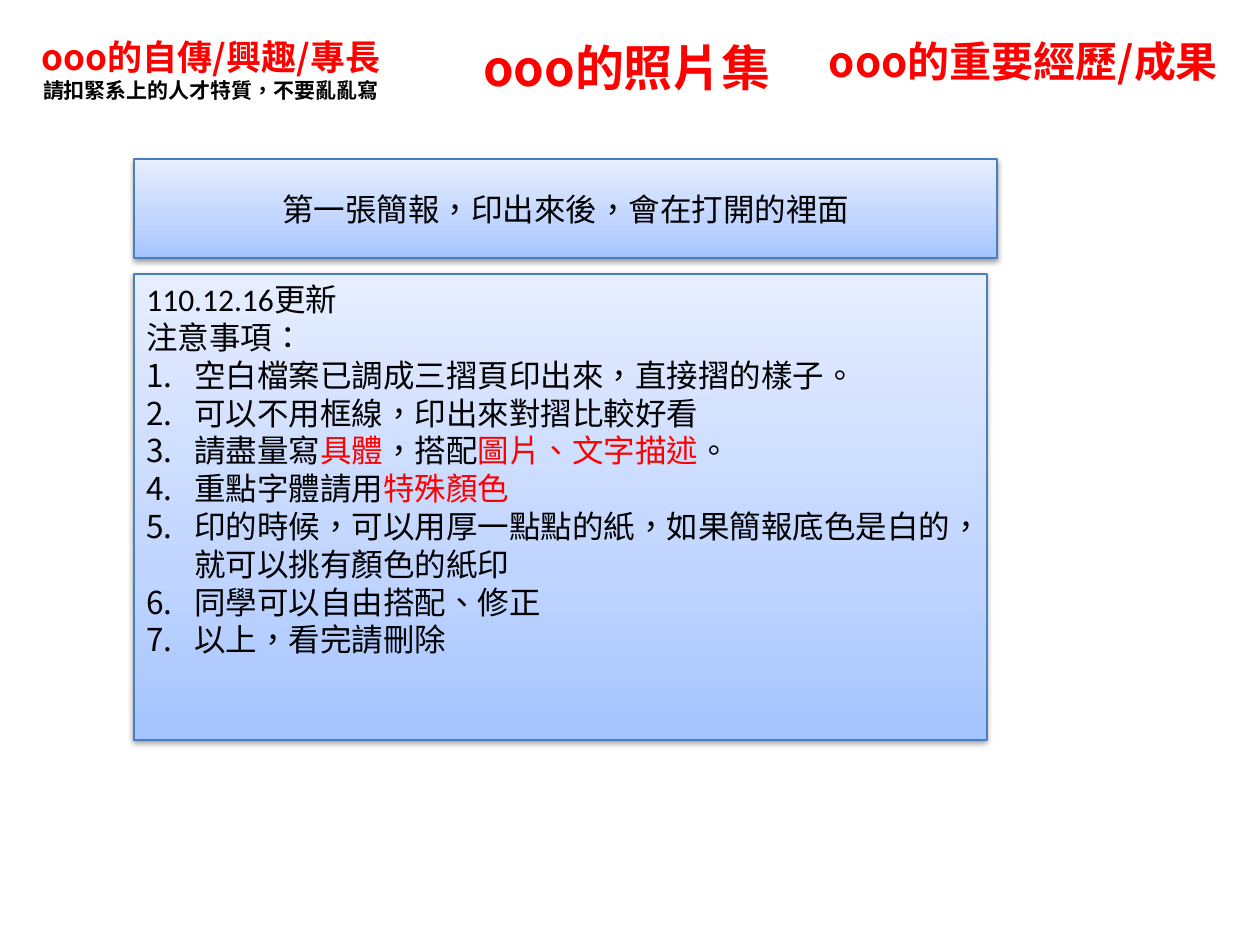
from lxml import etree
from pptx import Presentation
from pptx.dml.color import RGBColor
from pptx.enum.shapes import MSO_SHAPE as Shape
from pptx.enum.text import MSO_ANCHOR as Anchor, MSO_AUTO_SIZE as AutoSize, PP_ALIGN as Align
from pptx.oxml import parse_xml
from pptx.oxml.ns import nsdecls, qn
from pptx.util import Emu, Pt

PX_PER_INCH = 126
RED = RGBColor(0xFF, 0x00, 0x00)
BLACK = RGBColor(0x00, 0x00, 0x00)
BORDER = RGBColor(0x4B, 0x7E, 0xBC)
LIGHT_BLUE = RGBColor(0xE6, 0xEE, 0xFF)
MID_BLUE = RGBColor(0xBF, 0xD4, 0xFF)
DEEP_BLUE = RGBColor(0xA4, 0xC4, 0xFF)
CJK_FONT = "Noto Sans CJK SC"
LATIN_FONT = "Calibri"

HEADINGS = [  # left, top, width, height, text, size
    (24, 29, 374, 81, "ooo的自傳/興趣/專長", 20),
    (440, 31, 374, 72, "ooo的照片集", 28),
    (815, 29, 417, 63, "ooo的重要經歷/成果", 24),
]
HEADING_HINT = "請扣緊系上的人才特質，不要亂亂寫"
BANNER = "第一張簡報，印出來後，會在打開的裡面"
INTRO = ["110.12.16更新", "注意事項："]
# Odd pieces of each note are emphasised
NOTES = [
    ["空白檔案已調成三摺頁印出來，直接摺的樣子。"],
    ["可以不用框線，印出來對摺比較好看"],
    ["請盡量寫", "具體", "，搭配", "圖片、文字描述", "。"],
    ["重點字體請用", "特殊顏色"],
    ["印的時候，可以用厚一點點的紙，如果簡報底色是白的，就可以挑有顏色的紙印"],
    ["同學可以自由搭配、修正"],
    ["以上，看完請刪除"],
]


def px(length):
    return Emu(round(length * 914400 / PX_PER_INCH))


def format_run(run, size, color, latin=LATIN_FONT, bold=False):
    font = run.font
    font.size, font.bold, font.name = Pt(size), bold, latin
    font.color.rgb = color
    properties = run._r.get_or_add_rPr()
    properties.set("lang", "zh-TW")
    east_asian = etree.Element(qn("a:ea"), typeface=CJK_FONT)
    properties.find(qn("a:latin")).addnext(east_asian)


def add_paragraph(frame, pieces, size, color=BLACK, align=Align.LEFT, **style):
    """Fill the first paragraph if it is empty, otherwise append one."""
    paragraph = frame.paragraphs[0]
    if paragraph.runs:
        paragraph = frame.add_paragraph()
    paragraph.alignment = align
    for index, piece in enumerate(pieces):
        run = paragraph.add_run()
        run.text = piece
        format_run(run, size, RED if index % 2 else color, **style)
    return paragraph


def number_paragraph(paragraph):
    properties = paragraph._p.get_or_add_pPr()
    indent = px(48)
    properties.set("marL", str(indent))
    properties.set("indent", str(-indent))
    etree.SubElement(properties, qn("a:buFont"), typeface="+mj-lt")
    etree.SubElement(properties, qn("a:buAutoNum"), type="arabicPeriod")


def add_heading(slide, left, top, width, height, text, size):
    box = slide.shapes.add_textbox(px(left), px(top), px(width), px(height))
    frame = box.text_frame
    frame.word_wrap = True
    frame.auto_size = AutoSize.SHAPE_TO_FIT_TEXT
    add_paragraph(frame, [text], size, RED, Align.CENTER, latin=CJK_FONT, bold=True)
    return frame


def add_panel(slide, left, top, width, height, anchor):
    """Add a rectangle with a vertical blue gradient and a soft shadow."""
    panel = slide.shapes.add_shape(Shape.RECTANGLE, px(left), px(top), px(width), px(height))
    panel.line.color.rgb = BORDER
    panel.line.width = Pt(0.75)
    stops = "".join(
        f'<a:gs pos="{position * 1000}"><a:srgbClr val="{color}"/></a:gs>'
        for position, color in [(0, DEEP_BLUE), (35, MID_BLUE), (100, LIGHT_BLUE)])
    gradient = parse_xml(
        f'<a:gradFill {nsdecls("a")} rotWithShape="1"><a:gsLst>{stops}</a:gsLst>'
        '<a:lin ang="16200000" scaled="1"/></a:gradFill>')
    properties = panel._element.spPr
    properties.find(qn("a:prstGeom")).addnext(gradient)
    properties.append(parse_xml(
        f'<a:effectLst {nsdecls("a")}><a:outerShdw blurRad="{Pt(3.1)}" dist="{Pt(1.6)}" '
        'dir="5400000" rotWithShape="0"><a:srgbClr val="000000"><a:alpha val="38000"/>'
        '</a:srgbClr></a:outerShdw></a:effectLst>'))
    panel.text_frame.word_wrap = True
    panel.text_frame.vertical_anchor = anchor
    return panel.text_frame


def add_notes_panel(slide):
    frame = add_panel(slide, 134, 274, 853, 466, Anchor.TOP)
    for line in INTRO:
        add_paragraph(frame, [line], 18)
    for note in NOTES:
        number_paragraph(add_paragraph(frame, note, 18))


def main():
    presentation = Presentation()
    presentation.slide_width, presentation.slide_height = px(1260), px(945)
    slide = presentation.slides.add_slide(presentation.slide_layouts[6])

    biography, *_ = [add_heading(slide, *heading) for heading in HEADINGS]
    add_paragraph(biography, [HEADING_HINT], 12, align=Align.CENTER, latin=CJK_FONT, bold=True)

    add_notes_panel(slide)
    banner = add_panel(slide, 134, 159, 863, 99, Anchor.MIDDLE)
    add_paragraph(banner, [BANNER], 18, align=Align.CENTER)
    presentation.save("out.pptx")


if __name__ == "__main__":
    main()
